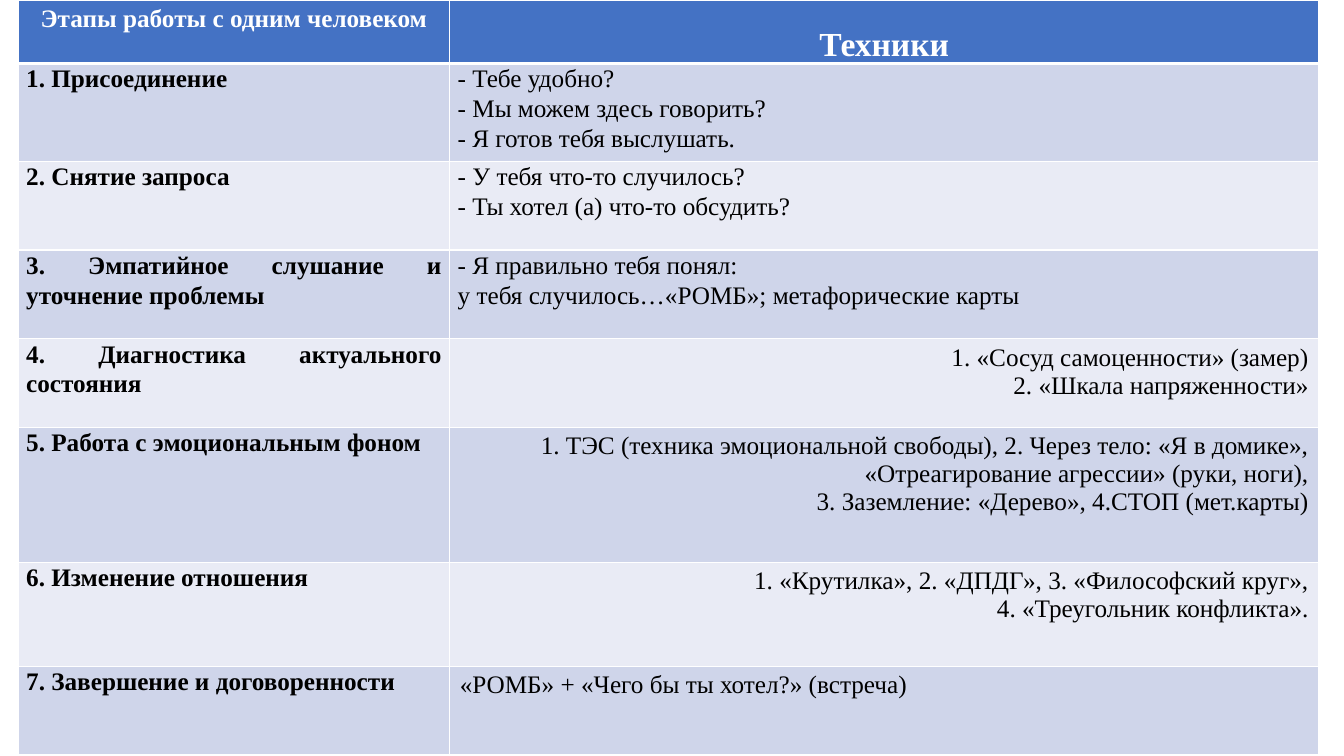
import pptx
import pptx.util
import pptx.dml.color
import pptx.enum.text
from lxml import etree
from pptx.oxml.ns import qn

Inches, Pt = pptx.util.Inches, pptx.util.Pt
ALIGN = pptx.enum.text.PP_ALIGN
ANCHOR = pptx.enum.text.MSO_ANCHOR

COLORS = {"header": "4472C4", "odd": "CFD5EA", "even": "E9EBF5",
          "white": "FFFFFF", "black": "000000"}
FONT = "Times New Roman"

HEADERS = ["Этапы работы с одним человеком", "Техники"]
# stage, paragraphs of techniques, style of the techniques cell
STAGES = [
    ("1. Присоединение",
     ["- Тебе удобно?", "- Мы можем здесь говорить?", "- Я готов тебя выслушать."], "tight"),
    ("2. Снятие запроса",
     ["- У тебя что-то случилось?", "- Ты хотел (а) что-то обсудить?"], "tight"),
    ("3. Эмпатийное слушание и уточнение проблемы",
     ["- Я правильно тебя понял:", "у тебя случилось…«РОМБ»; метафорические карты"], "tight"),
    ("4. Диагностика актуального состояния",
     ["1. «Сосуд самоценности» (замер)", "2. «Шкала напряженности»"], "right"),
    ("5. Работа с эмоциональным фоном",
     ["1. ТЭС (техника эмоциональной свободы), 2. Через тело: «Я в домике», "
      "«Отреагирование агрессии» (руки, ноги),",
      "3. Заземление: «Дерево», 4.СТОП (мет.карты)"], "right"),
    ("6. Изменение отношения",
     ["1. «Крутилка», 2. «ДПДГ», 3. «Философский круг»,", "4. «Треугольник конфликта»."], "right"),
    ("7. Завершение и договоренности",
     ["«РОМБ» + «Чего бы ты хотел?» (встреча)"], "left"),
]
COLUMNS = [4.28, 8.62]
ROWS = [0.63, 0.97, 0.88, 0.88, 0.88, 1.34, 1.03, 0.88]
TABLE_LEFT = 0.18

# alignment, line spacing, side margin, top and bottom margin
STYLES = {
    "title": (ALIGN.CENTER, 1.0, 0.1, 0.05),
    "heading": (ALIGN.CENTER, 1.07, 0.08, 0),
    "tight": (ALIGN.JUSTIFY, 1.07, 0.08, 0),
    "right": (ALIGN.RIGHT, 1.0, 0.1, 0.05),
    "left": (ALIGN.LEFT, 1.0, 0.1, 0.05),
}


def rgb(name):
    return pptx.dml.color.RGBColor.from_string(COLORS[name])


def add_borders(cell, bottom):
    """Draw white cell borders, which must precede the fill in the XML."""
    tc_pr = cell._tc.get_or_add_tcPr()
    for i, (side, width) in enumerate([("L", 1), ("R", 1), ("T", 1), ("B", bottom)]):
        ln = etree.Element(qn(f"a:ln{side}"), w=str(Pt(width)))
        fill = etree.SubElement(ln, qn("a:solidFill"))
        etree.SubElement(fill, qn("a:srgbClr"), val=COLORS["white"])
        tc_pr.insert(i, ln)


def fill_cell(cell, lines, style, fill, color="black", size=18, bold=False, bottom=1):
    align, spacing, side, edge = STYLES[style]
    margins = {"margin_left": side, "margin_right": side,
               "margin_top": edge, "margin_bottom": edge}
    for name, value in margins.items():
        setattr(cell, name, Inches(value))
    cell.fill.solid()
    cell.fill.fore_color.rgb = rgb(fill)
    add_borders(cell, bottom)
    tf = cell.text_frame
    for i, line in enumerate(lines):
        p = tf.paragraphs[0] if i == 0 else tf.add_paragraph()
        p.alignment, p.line_spacing = align, spacing
        r = p.add_run()
        r.text = line
        for name, value in {"name": FONT, "size": Pt(size), "bold": bold}.items():
            setattr(r.font, name, value)
        r.font.color.rgb = rgb(color)


prs = pptx.Presentation()
prs.slide_width, prs.slide_height = Inches(13.33), Inches(7.5)
s = prs.slides.add_slide(prs.slide_layouts[6])
table = s.shapes.add_table(len(ROWS), len(COLUMNS), Inches(TABLE_LEFT), 0,
                           Inches(sum(COLUMNS)), Inches(sum(ROWS))).table
for column, width in zip(table.columns, COLUMNS):
    column.width = Inches(width)
for row, height in zip(table.rows, ROWS):
    row.height = Inches(height)

for col, (style, size) in enumerate([("title", 18), ("heading", 24)]):
    fill_cell(table.cell(0, col), [HEADERS[col]], style, "header",
              color="white", size=size, bold=True, bottom=3)
table.cell(0, 1).vertical_anchor = ANCHOR.BOTTOM

for row, (stage, techniques, style) in enumerate(STAGES, start=1):
    band = "odd" if row % 2 else "even"
    fill_cell(table.cell(row, 0), [stage], "tight", band, bold=True)
    fill_cell(table.cell(row, 1), techniques, style, band)

prs.save("out.pptx")
